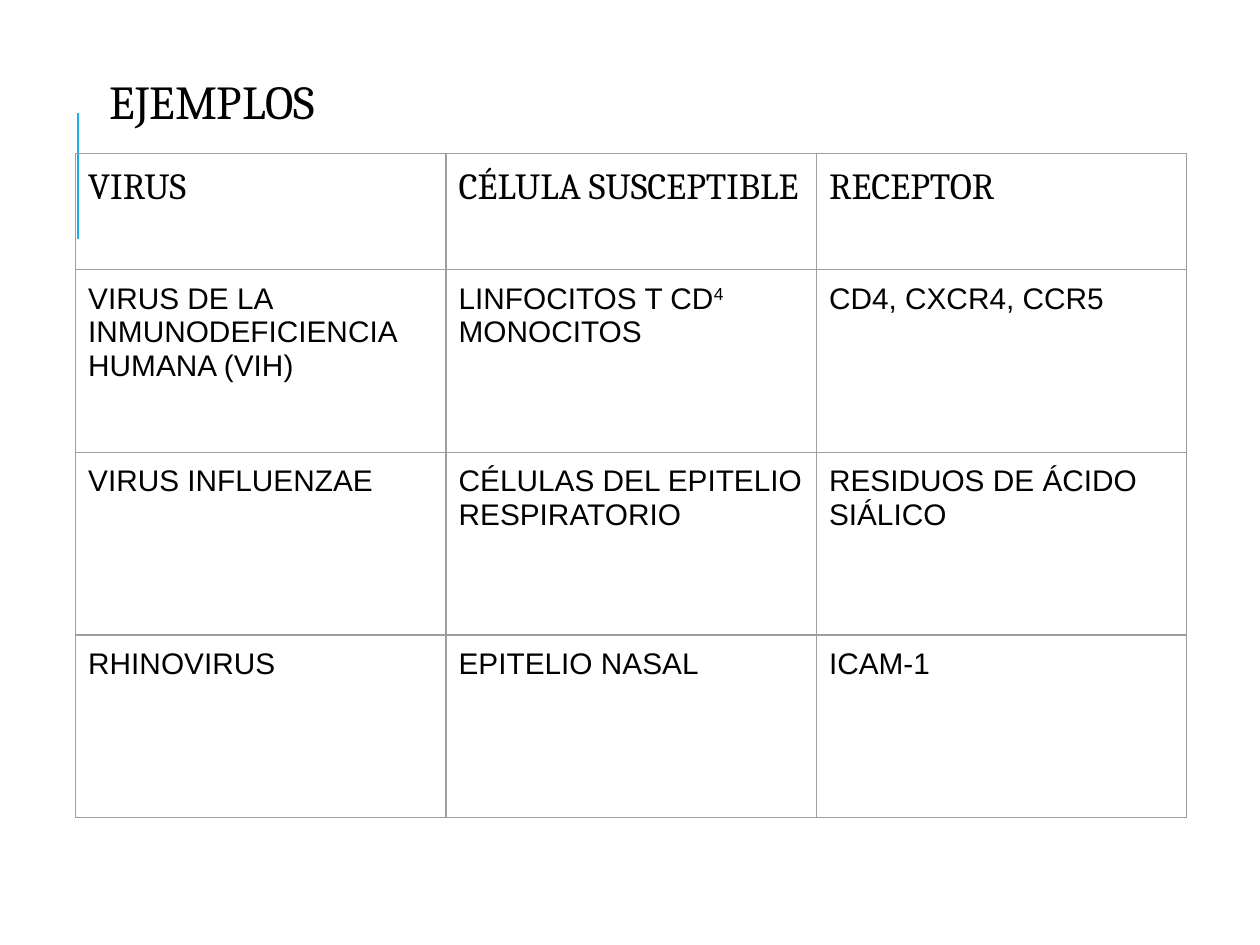
import pptx
import pptx.dml.color
import pptx.enum.shapes
import pptx.enum.text
import pptx.oxml
import pptx.oxml.ns
import pptx.util
from pptx.util import Inches

COLORS = {"text": "000000", "accent": "1CADE4", "border": "9E9E9E"}
HEADING_FONT = "Cambria"
BODY_FONT = "Arial"
HEADERS = ["VIRUS", "CÉLULA SUSCEPTIBLE", "RECEPTOR"]
EXAMPLES = [
    ["VIRUS DE LA INMUNODEFICIENCIA HUMANA (VIH)",
     [[("LINFOCITOS T CD", False), ("4", True)], [("MONOCITOS", False)]],
     "CD4, CXCR4, CCR5"],
    ["VIRUS INFLUENZAE", "CÉLULAS DEL EPITELIO RESPIRATORIO", "RESIDUOS DE ÁCIDO SIÁLICO"],
    ["RHINOVIRUS", "EPITELIO NASAL", "ICAM-1"],
]


def color(name):
    return pptx.dml.color.RGBColor.from_string(COLORS[name])


def write_text(text_frame, text, *, size, font, color_name="text"):
    paragraphs = [[(text, False)]] if isinstance(text, str) else text
    for index, parts in enumerate(paragraphs):
        paragraph = text_frame.add_paragraph() if index else text_frame.paragraphs[0]
        paragraph.alignment = pptx.enum.text.PP_ALIGN.LEFT
        for content, superscript in parts:
            run = paragraph.add_run()
            run.text = content
            run.font.size = pptx.util.Pt(size)
            run.font.name = font
            run.font.color.rgb = color(color_name)
            if superscript:
                run.font._element.set("baseline", "30000")


class SlideBuilder:
    margin = Inches(0.1)

    def __init__(self, presentation):
        self.slide = presentation.slides.add_slide(presentation.slide_layouts[5])

    def set_margins(self, target):
        for side in ("left", "top", "right", "bottom"):
            setattr(target, f"margin_{side}", self.margin)

    def title(self, text, left, top, width, height):
        shape = self.slide.shapes.title
        shape.left, shape.top, shape.width, shape.height = left, top, width, height
        text_frame = shape.text_frame
        text_frame.word_wrap = True
        text_frame.auto_size = pptx.enum.text.MSO_AUTO_SIZE.NONE
        text_frame.vertical_anchor = pptx.enum.text.MSO_ANCHOR.TOP
        self.set_margins(text_frame)
        write_text(text_frame, text, size=27, font=HEADING_FONT)

    def line(self, start_x, start_y, end_x, end_y):
        connector = self.slide.shapes.add_connector(
            pptx.enum.shapes.MSO_CONNECTOR.STRAIGHT, start_x, start_y, end_x, end_y)
        connector.line.color.rgb = color("accent")
        connector.line.width = pptx.util.Pt(1.5)
        connector._element.spPr.append(pptx.oxml.parse_xml(
            f'<a:effectLst {pptx.oxml.ns.nsdecls("a")}/>'))

    def border(self, cell):
        properties = cell._tc.get_or_add_tcPr()
        for index, side in enumerate(("lnL", "lnR", "lnT", "lnB")):
            properties.insert(index, pptx.oxml.parse_xml(
                f'<a:{side} {pptx.oxml.ns.nsdecls("a")} w="{pptx.util.Pt(0.75)}">'
                f'<a:solidFill><a:srgbClr val="{COLORS["border"]}"/></a:solidFill></a:{side}>'))

    def table(self, rows, left, top, column_width, row_heights):
        column_count = len(rows[0])
        table = self.slide.shapes.add_table(
            len(rows), column_count, left, top,
            column_width * column_count, sum(row_heights)).table
        table.first_row = False
        table.horz_banding = False
        for column in table.columns:
            column.width = column_width
        for row_index, row in enumerate(rows):
            table.rows[row_index].height = row_heights[row_index]
            size, font = (17, BODY_FONT) if row_index else (21, HEADING_FONT)
            for column_index, text in enumerate(row):
                cell = table.cell(row_index, column_index)
                cell.fill.background()
                self.set_margins(cell)
                self.border(cell)
                write_text(cell.text_frame, text, size=size, font=font)


def main():
    presentation = pptx.Presentation()
    presentation.slide_width = Inches(10)
    presentation.slide_height = Inches(7.5)
    builder = SlideBuilder(presentation)
    builder.line(Inches(0.62), Inches(1.9), Inches(0.62), Inches(0.9))
    builder.table([HEADERS, *EXAMPLES], Inches(0.6), Inches(1.22), Inches(2.94),
                  [Inches(0.92)] + [Inches(1.45)] * len(EXAMPLES))
    builder.title("EJEMPLOS", Inches(0.77), Inches(0.47), Inches(6.65), Inches(0.39))
    presentation.save("out.pptx")


if __name__ == "__main__":
    main()
